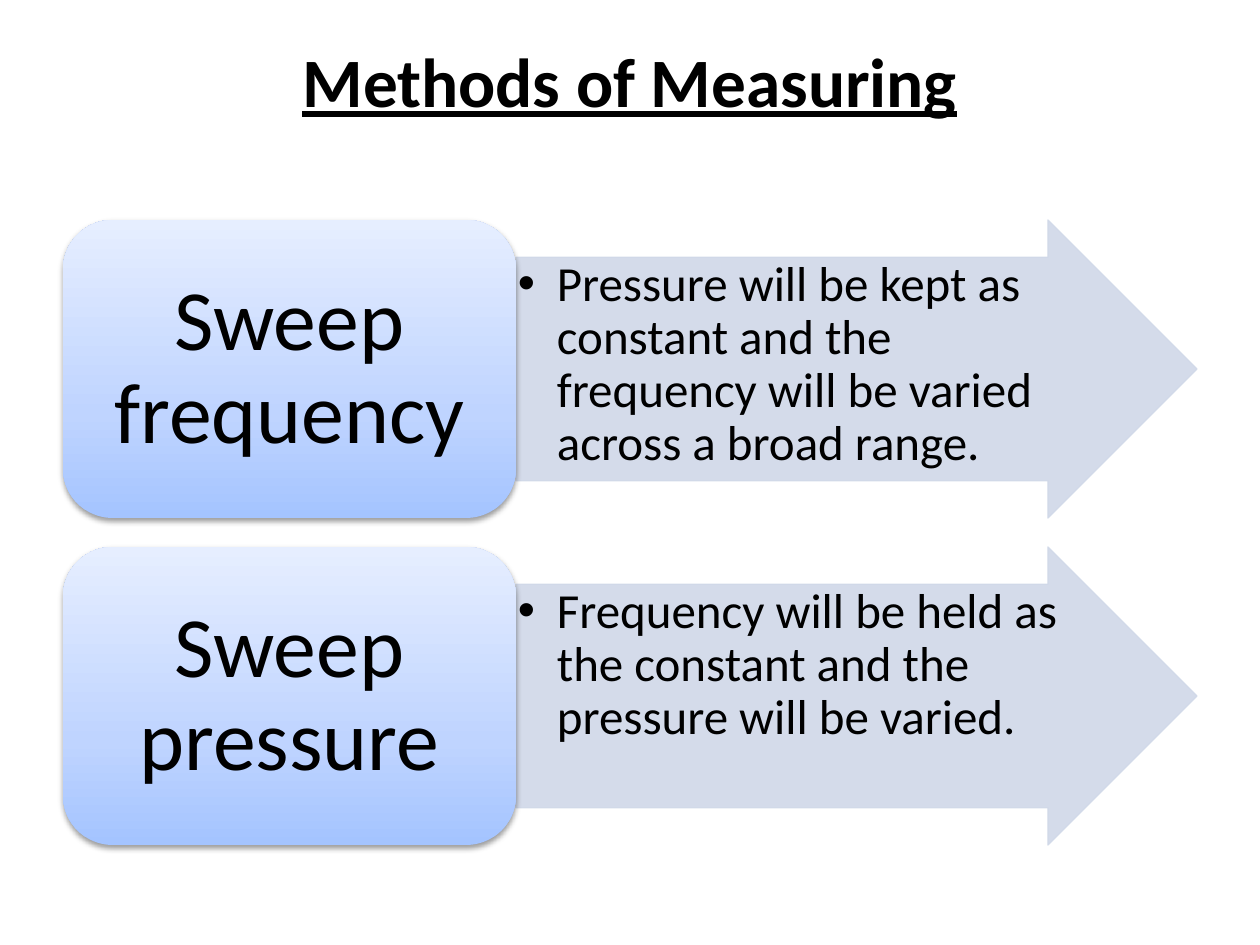
from copy import deepcopy

from lxml.etree import SubElement
from pptx import Presentation
from pptx.dml.color import RGBColor
from pptx.enum.shapes import MSO_SHAPE
from pptx.enum.text import MSO_ANCHOR, PP_ALIGN
from pptx.oxml.ns import qn
from pptx.util import Emu, Pt

SCALE = 914400 / 126
BLACK = RGBColor(0x00, 0x00, 0x00)
PALE = RGBColor(0xD0, 0xD8, 0xE8)
STOPS = [
    (0, RGBColor(0xA4, 0xC4, 0xFF)),
    (0.35, RGBColor(0xBF, 0xD4, 0xFF)),
    (1, RGBColor(0xE6, 0xEE, 0xFF)),
]
TITLE = {"size": Pt(39.6), "bold": True, "underline": True}
LABEL = {"size": Pt(49)}
NOTE = {"size": Pt(28)}
ROWS = [
    ("Sweep frequency", "Pressure will be kept as constant and the "
     "frequency will be varied across a broad range."),
    ("Sweep pressure", "Frequency will be held as the constant and the "
     "pressure will be varied."),
]


def px(*nums):
    return [Emu(round(num * SCALE)) for num in nums]


def style(item, form):
    for name, value in form.items():
        setattr(item, name, value)


def add_text(slide, box, text, font, para, pad=(0, 0),
             anchor=MSO_ANCHOR.TOP, indent=0):
    frame = slide.shapes.add_textbox(*px(*box)).text_frame
    side, edge = px(*pad)
    style(frame, {
        "word_wrap": True, "vertical_anchor": anchor,
        "margin_left": side, "margin_right": side,
        "margin_top": edge, "margin_bottom": edge,
    })
    line = frame.paragraphs[0]
    style(line, para)
    if indent:
        props = line._p.get_or_add_pPr()
        gap = px(indent)[0]
        props.set("marL", str(gap))
        props.set("indent", str(-gap))
        SubElement(props, qn("a:buFont"), typeface="Arial")
        SubElement(props, qn("a:buChar"), char="•")
    run = line.add_run()
    run.text = text
    style(run.font, {"name": "Calibri", **font})
    run.font.color.rgb = BLACK


def add_arrow(slide, box, text):
    left, top, width, height = box
    arrow = slide.shapes.add_shape(MSO_SHAPE.RIGHT_ARROW, *px(*box))
    arrow.adjustments[0] = 0.75
    arrow.adjustments[1] = 0.5
    arrow.shadow.inherit = False
    arrow.fill.solid()
    arrow.fill.fore_color.rgb = PALE
    arrow.line.color.rgb = PALE
    arrow.line.width = Pt(0.75)
    for color in arrow._element.spPr.iter(qn("a:srgbClr")):
        SubElement(color, qn("a:alpha"), val="90000")
    inset = height // 8
    area = (left, top + inset, width - height * 3 // 8, height - 2 * inset)
    add_text(slide, area, text, NOTE, {"line_spacing": 0.9},
             pad=(2, 2), indent=39)


def add_card(slide, box, text):
    left, top, width, height = box
    card = slide.shapes.add_shape(MSO_SHAPE.ROUNDED_RECTANGLE, *px(*box))
    card.line.fill.background()
    card.fill.gradient()
    card.fill.gradient_angle = 90
    group = card._element.spPr.find(".//" + qn("a:gsLst"))
    group.append(deepcopy(group[0]))
    for stop, (place, color) in zip(card.fill.gradient_stops, STOPS):
        stop.position = place
        stop.color.rgb = color
    card.shadow.inherit = False
    effects = card._element.spPr.find(qn("a:effectLst"))
    shade = SubElement(effects, qn("a:outerShdw"), blurRad=str(Pt(3.1)),
                       dist=str(Pt(1.6)), dir="5400000", rotWithShape="0")
    color = SubElement(shade, qn("a:srgbClr"), val=str(BLACK))
    SubElement(color, qn("a:alpha"), val="38000")
    inset = 15
    area = (left + inset, top + inset, width - 2 * inset, height - 2 * inset)
    add_text(slide, area, text, LABEL,
             {"alignment": PP_ALIGN.CENTER, "line_spacing": 0.9},
             pad=(25, 13), anchor=MSO_ANCHOR.MIDDLE)


def add_rows(slide, box, rows, gap):
    left, top, width, height = box
    high = (height - gap * (len(rows) - 1)) // len(rows)
    wide = width * 2 // 5
    for place, (label, note) in enumerate(rows):
        y = top + place * (high + gap)
        add_arrow(slide, (left + wide, y, width - wide, high), note)
        add_card(slide, (left, y, wide, high), label)


def main():
    deck = Presentation()
    style(deck, dict(zip(("slide_width", "slide_height"), px(1260, 945))))
    slide = deck.slides.add_slide(deck.slide_layouts[6])
    add_text(slide, (63, 38, 1134, 157), "Methods of Measuring", TITLE,
             {"alignment": PP_ALIGN.CENTER})
    add_rows(slide, (63, 220, 1134, 625), ROWS, 29)
    deck.save("out.pptx")


if __name__ == "__main__":
    main()
